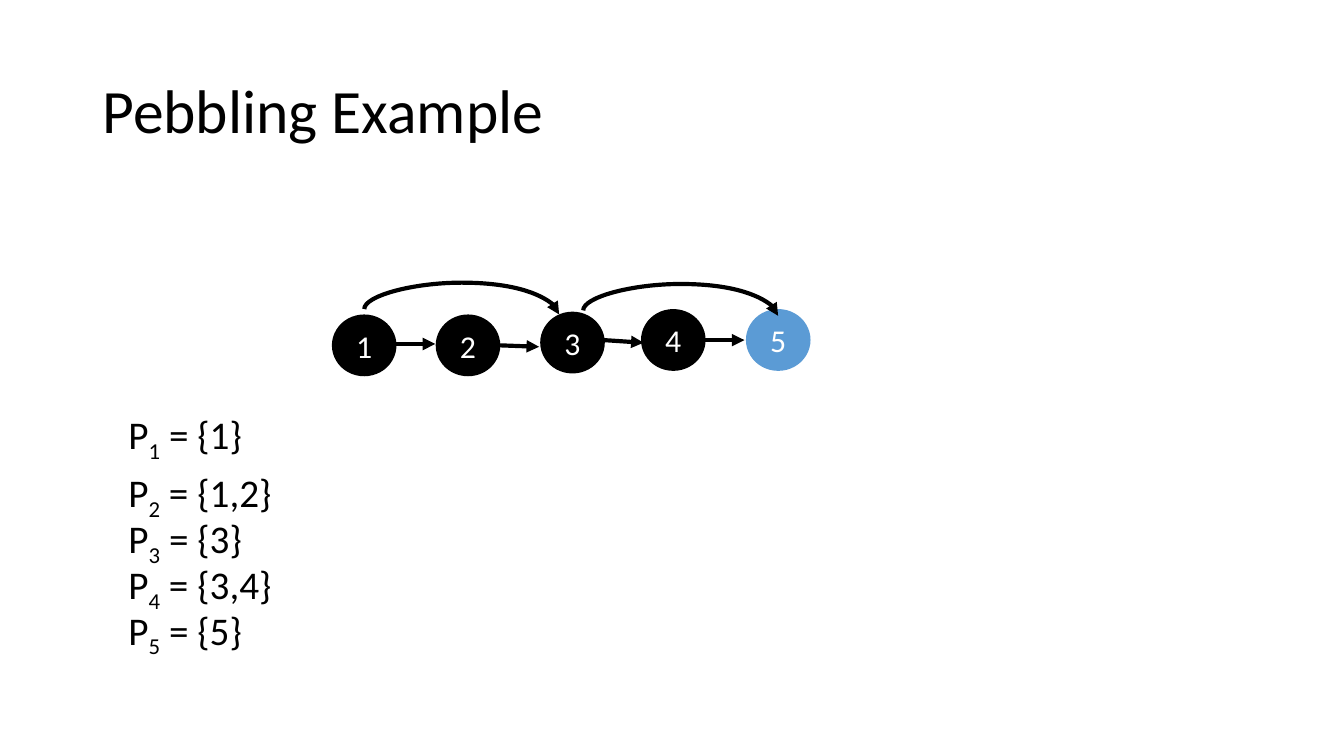
import dataclasses

import pptx
import pptx.dml.color
import pptx.enum.dml
import pptx.enum.shapes
import pptx.enum.text
import pptx.util
from pptx.oxml.ns import qn
from lxml import etree

Pt = pptx.util.Pt
RGB = pptx.dml.color.RGBColor


@dataclasses.dataclass(frozen=True)
class Theme:
    font: str = "Calibri"
    ink: RGB = RGB.from_string("000000")
    paper: RGB = RGB.from_string("FFFFFF")
    unpebbled: RGB = RGB.from_string("5B9BD5")
    title_size: float = 33
    step_size: float = 21
    node_size: float = 17
    line_width: float = 2.25


THEME = Theme()
NODE_WIDTH, NODE_HEIGHT = 34.6, 33.1
ARROW_LENGTH = 21.6
# Left and top of each node within the diagram
NODES = [(0, 2.9), (55.6, 2.9), (111.6, 1.4), (165.6, 0), (221.8, 0)]
# Start height and end height of the arrow leaving each node
ARROWS = [(18.7, 18.7), (19.4, 20.2), (16.6, 18), (16.6, 16.6)]
# Start of each arc that skips a node
ARCS = [(17.3, 0), (134.6, 0.7)]
ARC_SPAN, ARC_DROP, ARC_BEND = 104.4, 2.9, -490100
PEBBLED_SETS = ["1", "1,2", "3", "3,4", "5"]


def add_run(paragraph, text, size, color, baseline=None):
    run = paragraph.add_run()
    run.text = text
    run.font.name = THEME.font
    run.font.size = Pt(size)
    run.font.color.rgb = color
    if baseline is not None:
        run.font._element.set("baseline", str(baseline))


def format_frame(frame, anchor, wrap=True):
    frame.margin_left = frame.margin_right = Pt(5.4)
    frame.margin_top = frame.margin_bottom = Pt(2.7)
    frame.vertical_anchor = anchor
    frame.word_wrap = wrap


def place_title(slide, left, top, width, height):
    title = slide.shapes.title
    title.left, title.top = Pt(left), Pt(top)
    title.width, title.height = Pt(width), Pt(height)
    frame = title.text_frame
    format_frame(frame, pptx.enum.text.MSO_ANCHOR.MIDDLE)
    frame.auto_size = pptx.enum.text.MSO_AUTO_SIZE.NONE
    paragraph = frame.paragraphs[0]
    paragraph.alignment = pptx.enum.text.PP_ALIGN.LEFT
    paragraph.line_spacing = 0.9
    add_run(paragraph, "Pebbling Example", THEME.title_size, THEME.ink)


def add_arrow(slide, kind, start_x, start_y, end_x, end_y):
    arrow = slide.shapes.add_connector(
        kind, Pt(start_x), Pt(start_y), Pt(end_x), Pt(end_y))
    arrow.line.color.rgb = THEME.ink
    arrow.line.width = Pt(THEME.line_width)
    etree.SubElement(arrow.line._get_or_add_ln(), qn("a:tailEnd"), type="triangle")
    etree.SubElement(arrow._element.spPr, qn("a:effectLst"))
    return arrow


def add_arc(slide, start_x, start_y):
    """Add a curved connector, turned so that it bulges upwards."""
    middle_x = start_x + ARC_SPAN / 2
    middle_y = start_y + ARC_DROP / 2
    arc = add_arrow(
        slide, pptx.enum.shapes.MSO_CONNECTOR.CURVE,
        middle_x + ARC_DROP / 2, middle_y - ARC_SPAN / 2,
        middle_x - ARC_DROP / 2, middle_y + ARC_SPAN / 2)
    properties = arc._element.spPr
    properties.find(qn("a:xfrm")).set("rot", str(270 * 60000))
    geometry = properties.find(qn("a:prstGeom"))
    adjustments = geometry.find(qn("a:avLst"))
    if adjustments is None:
        adjustments = etree.SubElement(geometry, qn("a:avLst"))
    etree.SubElement(adjustments, qn("a:gd"), name="adj1", fmla=f"val {ARC_BEND}")


def add_node(slide, left, top, label, fill):
    node = slide.shapes.add_shape(
        pptx.enum.shapes.MSO_SHAPE.OVAL,
        Pt(left), Pt(top), Pt(NODE_WIDTH), Pt(NODE_HEIGHT))
    node.shadow.inherit = False
    node.fill.solid()
    node.fill.fore_color.rgb = fill
    node.line.fill.background()
    format_frame(node.text_frame, pptx.enum.text.MSO_ANCHOR.MIDDLE)
    paragraph = node.text_frame.paragraphs[0]
    paragraph.alignment = pptx.enum.text.PP_ALIGN.CENTER
    add_run(paragraph, label, THEME.node_size, THEME.paper)


def place_graph(slide, left, top):
    for number, (x, y) in enumerate(NODES, 1):
        fill = THEME.unpebbled if number == len(NODES) else THEME.ink
        add_node(slide, left + x, top + y, str(number), fill)
    for (x, _), (start_y, end_y) in zip(NODES, ARROWS):
        start_x = left + x + NODE_WIDTH - 0.8
        add_arrow(slide, pptx.enum.shapes.MSO_CONNECTOR.STRAIGHT,
                  start_x, top + start_y, start_x + ARROW_LENGTH, top + end_y)
    for x, y in ARCS:
        add_arc(slide, left + x, top + y)


def place_steps(slide, left, top, pitch, first_gap):
    """List the pebbled sets, with a wider gap after the first one."""
    for index, members in enumerate(PEBBLED_SETS):
        step_top = top + index * pitch + (first_gap if index else 0)
        width = 89.3 if "," in members else 73.4
        box = slide.shapes.add_textbox(Pt(left), Pt(step_top), Pt(width), Pt(31))
        frame = box.text_frame
        format_frame(frame, pptx.enum.text.MSO_ANCHOR.TOP, wrap=False)
        frame.auto_size = pptx.enum.text.MSO_AUTO_SIZE.SHAPE_TO_FIT_TEXT
        paragraph = frame.paragraphs[0]
        add_run(paragraph, "P", THEME.step_size, THEME.ink)
        add_run(paragraph, str(index + 1), THEME.step_size, THEME.ink, -25000)
        add_run(paragraph, f" = {{{members}}}", THEME.step_size, THEME.ink)


def main():
    presentation = pptx.Presentation()
    presentation.slide_width, presentation.slide_height = Pt(720), Pt(405)
    slide = presentation.slides.add_slide(presentation.slide_layouts[5])
    place_title(slide, 49.5, 21.6, 621, 78.3)
    place_graph(slide, 177.8, 165.6)
    place_steps(slide, 63.4, 217.4, pitch=24.5, first_gap=6.5)
    presentation.save("out.pptx")


if __name__ == "__main__":
    main()
